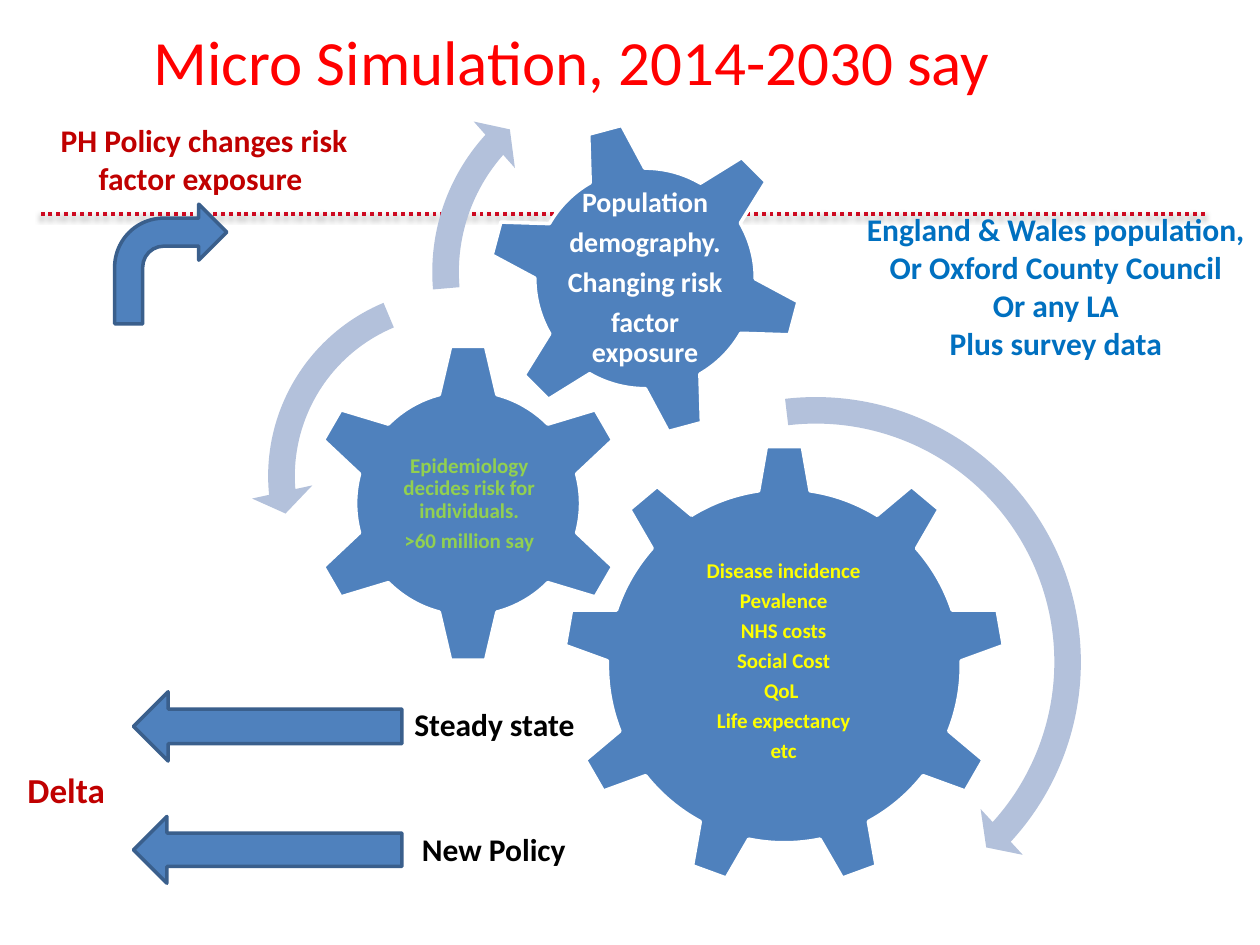
from lxml import etree
from pptx import Presentation
from pptx.dml.color import RGBColor
from pptx.enum import dml, shapes, text
from pptx.oxml.ns import qn
from pptx.util import Inches, Pt

BLUE = RGBColor(0x4F, 0x81, 0xBD)
DARK_BLUE = RGBColor(0x3A, 0x5F, 0x8C)
PALE_BLUE = RGBColor(0xB3, 0xC1, 0xDB)
TEXT_BLUE = RGBColor(0x00, 0x70, 0xC0)
RED = RGBColor(0xFF, 0x00, 0x00)
DARK_RED = RGBColor(0xC0, 0x00, 0x00)
RULE_RED = RGBColor(0xCD, 0x09, 0x20)
GREEN = RGBColor(0x92, 0xD0, 0x50)
YELLOW = RGBColor(0xFF, 0xFF, 0x00)
WHITE = RGBColor(0xFF, 0xFF, 0xFF)
BLACK = RGBColor(0x00, 0x00, 0x00)

KIND = shapes.MSO_SHAPE
CENTER = text.PP_ALIGN.CENTER


def add_figure(parent, kind, x, y, w, h, fill, line=None):
    sp = parent.add_shape(kind, Inches(x), Inches(y), Inches(w), Inches(h))
    sp.shadow.inherit = False
    sp.fill.solid()
    sp.fill.fore_color.rgb = fill
    if line is None:
        sp.line.fill.background()
    else:
        sp.line.color.rgb = line
        sp.line.width = Pt(2)
    return sp


def add_text(parent, x, y, w, h, lines, size, color, bold=True, align=None, wrap=True):
    sp = parent.add_textbox(Inches(x), Inches(y), Inches(w), Inches(h))
    tf = sp.text_frame
    tf.text = "\n".join(lines)
    tf.word_wrap = wrap
    tf.auto_size = text.MSO_AUTO_SIZE.SHAPE_TO_FIT_TEXT
    for p in tf.paragraphs:
        p.alignment = align
        for r in p.runs:
            r.font.name = "Calibri"
            r.font.size = Pt(size)
            r.font.bold = bold
            r.font.color.rgb = color
    return tf


def add_gear_text(parent, x, y, w, h, lines, size, color):
    tf = add_text(parent, x, y, w, h, lines, size, color, align=CENTER)
    tf.auto_size = text.MSO_AUTO_SIZE.NONE
    tf.vertical_anchor = text.MSO_ANCHOR.MIDDLE
    tf.margin_left = tf.margin_right = tf.margin_top = tf.margin_bottom = Inches(0.02)
    for p in tf.paragraphs:
        p.line_spacing = 0.9
        p.space_after = Pt(0.35 * size)


def add_dotted_rule(s, x, y, w):
    """Dotted line with a soft shadow below it."""
    cxn = s.shapes.add_connector(shapes.MSO_CONNECTOR.STRAIGHT,
                                 Inches(x + w), Inches(y), Inches(x), Inches(y))
    cxn.line.color.rgb = RULE_RED
    cxn.line.width = Pt(2.25)
    cxn.line.dash_style = dml.MSO_LINE.ROUND_DOT
    effects = etree.SubElement(cxn._element.spPr, qn("a:effectLst"))
    shadow = etree.SubElement(effects, qn("a:outerShdw"), blurRad=str(Pt(3.1)),
                              dist=str(Pt(1.6)), dir="5400000", rotWithShape="0")
    color = etree.SubElement(shadow, qn("a:srgbClr"), val="000000")
    etree.SubElement(color, qn("a:alpha"), val="38000")


def add_gears(s, x, y):
    """Three meshing gears with their turning arrows, from the top left corner."""
    group = s.shapes.add_group_shape().shapes
    gears = [
        # kind, gear offset and size, rotation, text box, lines, text size, colour
        (KIND.GEAR_9, (2.48, 3.13), 3.51, 0, (3.18, 3.95, 2.1, 1.8),
         ["Disease incidence", "Pevalence", "NHS costs", "Social Cost", "QoL ",
          "Life expectancy", "etc"], 12, YELLOW),
        (KIND.GEAR_6, (0.45, 2.32), 2.55, 0, (1.1, 2.97, 1.27, 1.26),
         ["Epidemiology decides risk for individuals.", ">60 million say"], 12, GREEN),
        (KIND.GEAR_6, (1.88, 0.56), 2.5, 345, (2.43, 1.11, 1.4, 1.4),
         ["Population", "demography.", "Changing risk", "factor exposure"], 16, WHITE),
    ]
    for kind, (dx, dy), size, rotation, (tx, ty, tw, th), lines, pts, color in gears:
        gear = add_figure(group, kind, x + dx, y + dy, size, size, BLUE, WHITE)
        gear.rotation = rotation
        add_gear_text(group, x + tx, y + ty, tw, th, lines, pts, color)

    turns = [
        (KIND.CIRCULAR_ARROW, 2.24, 2.61, 4.49, (0.047, 2.99, 25.451, 158.003, 0.055)),
        (KIND.LEFT_CIRCULAR_ARROW, 0, 1.75, 3.26, (0.065, 4.3, 104.891, 148.378, 0.075)),
        (KIND.CIRCULAR_ARROW, 1.3, 0, 3.52, (0.06, 3.941, 133.138, 105.082, 0.07)),
    ]
    for kind, dx, dy, size, adjustments in turns:
        arrow = add_figure(group, kind, x + dx, y + dy, size, size, PALE_BLUE)
        for i, value in enumerate(adjustments):
            arrow.adjustments[i] = value


def add_policy_input(s, x, y):
    add_figure(s.shapes, KIND.BENT_ARROW, x + 0.63, y + 0.71, 0.89, 0.95, BLUE, DARK_BLUE)
    add_text(s.shapes, x, y, 2.68, 0.71, ["PH Policy changes risk factor exposure "],
             18, DARK_RED, align=CENTER)


def add_outcomes(s, x, y):
    """Two result arrows with labels, and the difference between them."""
    for label, dy, height, label_x, label_w in [("Steady state", 0, 0.55, 3.07, 1.69),
                                                ("New Policy", 0.99, 0.53, 3.13, 1.44)]:
        add_figure(s.shapes, KIND.LEFT_ARROW, x + 0.94, y + dy, 2.13, height, BLUE, DARK_BLUE)
        add_text(s.shapes, x + label_x, y + dy + 0.06, label_w, 0.4, [label], 18, BLACK)
    add_text(s.shapes, x, y + 0.56, 0.94, 0.44, ["Delta"], 20, DARK_RED)


def main():
    prs = Presentation()
    prs.slide_width, prs.slide_height = Inches(10), Inches(7.5)
    s = prs.slides.add_slide(prs.slide_layouts[6])
    add_dotted_rule(s, 0.32, 1.7, 9.24)
    add_gears(s, 1.99, 0.4)
    add_text(s.shapes, 1.12, 0.13, 6.91, 0.71, ["Micro Simulation, 2014-2030 say"],
             36, RED, bold=False, wrap=False)
    add_text(s.shapes, 6.76, 1.62, 3.24, 1.62,
             ["England & Wales population,", "Or Oxford County Council", "Or any LA",
              "Plus survey data"], 18, TEXT_BLUE, align=CENTER, wrap=False)
    add_policy_input(s, 0.28, 0.91)
    add_outcomes(s, 0.12, 5.49)
    prs.save("out.pptx")


if __name__ == "__main__":
    main()
